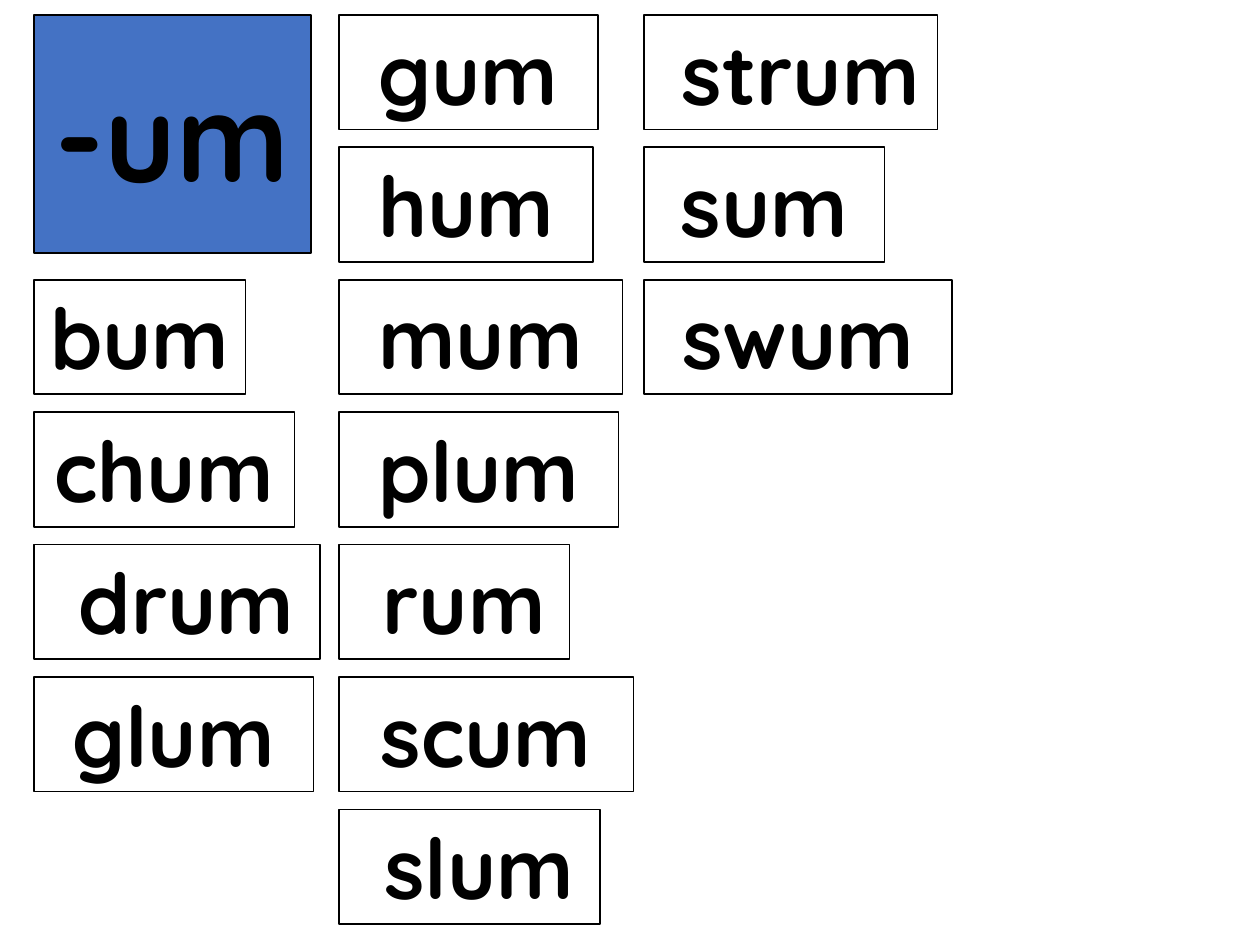
from pptx import Presentation
from pptx.dml.color import RGBColor
from pptx.enum.shapes import MSO_SHAPE
from pptx.enum.text import MSO_ANCHOR, PP_ALIGN
from pptx.util import Cm, Pt

BLACK = RGBColor(0, 0, 0)
WHITE = RGBColor(255, 255, 255)
BLUE = RGBColor(0x44, 0x72, 0xC4)

# Grid, in cm
LEFT, TOP = 0.68, 0.3
COL, ROW = 6.15, 2.67
HIGH = 2.31
INSET = 0.25

# Each column: first row, then (word, card width, extra left inset)
WORDS = [
    (2, [("bum", 4.27, 0), ("chum", 5.26, 0), ("drum", 5.77, 0.4),
         ("glum", 5.64, 0)]),
    (0, [("gum", 5.23, 0), ("hum", 5.13, 0), ("mum", 5.72, 0),
         ("plum", 5.64, 0), ("rum", 4.65, 0.4), ("scum", 5.94, 0),
         ("slum", 5.26, 0.4)]),
    (0, [("strum", 5.92, 0.4), ("sum", 4.85, 0), ("swum", 6.22, 0)]),
]


class Deck:
    """Holds the style and the current slide."""
    font = "Quicksand"
    ink = BLACK

    def __init__(self, slide):
        self.slide = slide

    def box(self, text, x, y, wide, high, fill, size):
        """Draw an outlined box with bold centred text."""
        shape = self.slide.shapes.add_shape(
            MSO_SHAPE.RECTANGLE, Cm(x), Cm(y), Cm(wide), Cm(high))
        shape.shadow.inherit = False
        shape.fill.solid()
        shape.fill.fore_color.rgb = fill
        shape.line.color.rgb = self.ink
        shape.line.width = Pt(1)
        frame = shape.text_frame
        frame.text = text
        para = frame.paragraphs[0]
        para.alignment = PP_ALIGN.CENTER
        font = para.runs[0].font
        font.name, font.size, font.bold = self.font, Pt(size), True
        font.color.rgb = self.ink
        return frame

    def title(self, text):
        """Draw the large word-ending box."""
        frame = self.box(text, LEFT, TOP, 5.59, 4.8, BLUE, 70)
        frame.vertical_anchor = MSO_ANCHOR.MIDDLE

    def card(self, word, col, row, wide, extra):
        """Draw one word card in its grid cell."""
        frame = self.box(word, LEFT + col * COL, TOP + row * ROW,
                         wide, HIGH, WHITE, 48)
        frame.word_wrap = False
        frame.vertical_anchor = MSO_ANCHOR.TOP
        frame.margin_left = Cm(INSET + extra)


def main():
    prs = Presentation()
    prs.slide_width, prs.slide_height = Cm(25.4), Cm(19.05)
    deck = Deck(prs.slides.add_slide(prs.slide_layouts[6]))

    # Word ending
    deck.title("-um")

    # Word cards
    for col, (first, words) in enumerate(WORDS):
        for row, (word, wide, extra) in enumerate(words, first):
            deck.card(word, col, row, wide, extra)

    prs.save("out.pptx")


if __name__ == "__main__":
    main()
